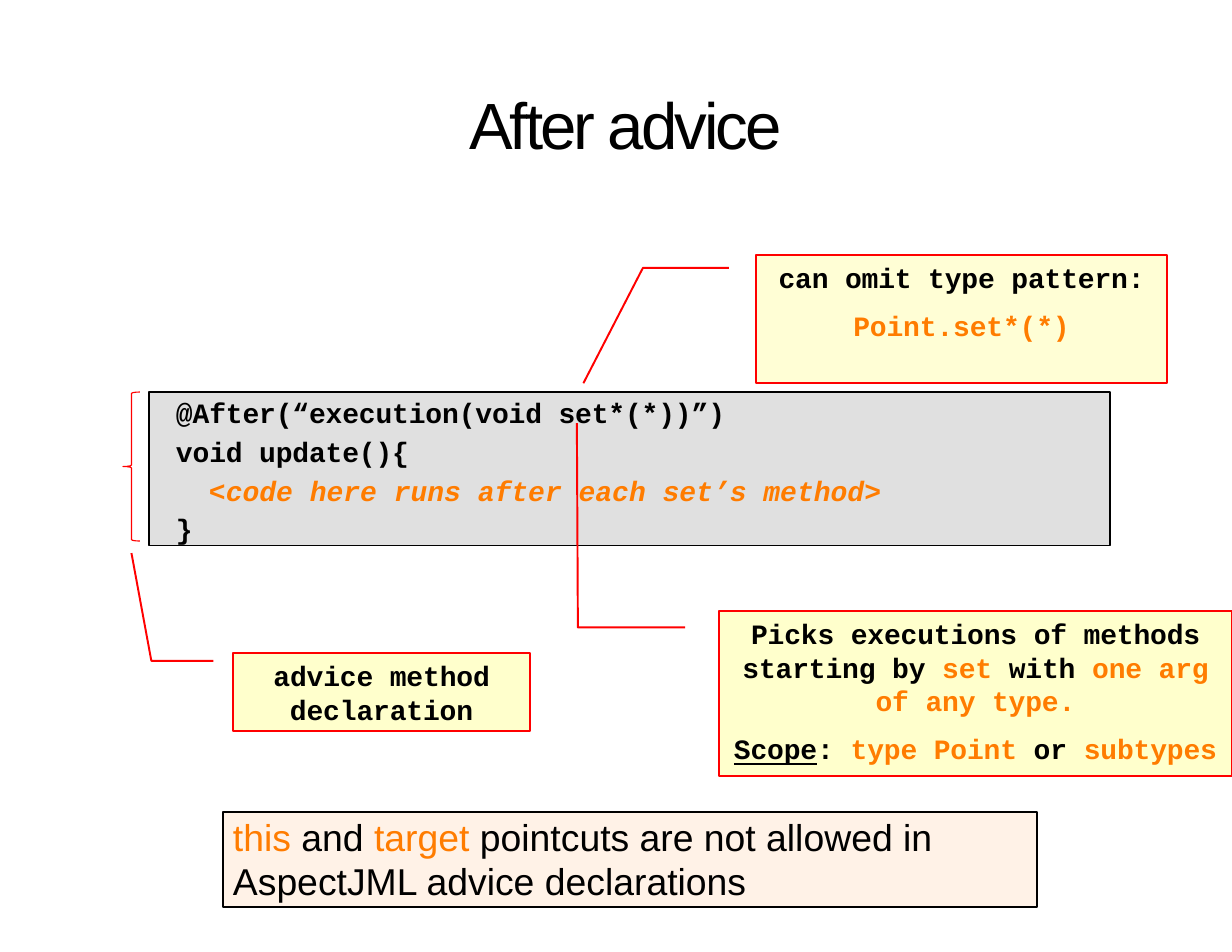
"""Build a slide on after advice, with annotated code and a closing note."""
from pptx import Presentation
from pptx.dml.color import RGBColor
from pptx.enum.shapes import MSO_SHAPE
from pptx.enum.text import MSO_ANCHOR, PP_ALIGN
from pptx.util import Pt

RECT = MSO_SHAPE.RECTANGLE
CALLOUT = MSO_SHAPE.LINE_CALLOUT_2
BRACE = MSO_SHAPE.LEFT_BRACE
TOP = MSO_ANCHOR.TOP
LEFT, CENTER = PP_ALIGN.LEFT, PP_ALIGN.CENTER

PX = 914400 // 112
BLACK = RGBColor(0x00, 0x00, 0x00)
ORANGE = RGBColor(0xFF, 0x7C, 0x00)
RED = RGBColor(0xFF, 0x00, 0x00)
GRAY = RGBColor(0xE0, 0xE0, 0xE0)
CREAM = RGBColor(0xFF, 0xFE, 0xD5)
YELLOW = RGBColor(0xFF, 0xFF, 0xCC)
PEACH = RGBColor(0xFF, 0xF2, 0xE7)
MONO, SANS = "Courier New", "Arial"

deck = Presentation()
deck.slide_width, deck.slide_height = 1232 * PX, 952 * PX
slide = deck.slides.add_slide(deck.slide_layouts[6])


def add_box(kind, place, fill, line, weight):
    box = slide.shapes.add_shape(kind, *[n * PX for n in place])
    box.shadow.inherit = False
    if fill is None:
        box.fill.background()
    else:
        box.fill.solid()
        box.fill.fore_color.rgb = fill
    box.line.color.rgb = line
    box.line.width = Pt(weight)
    return box


def write(frame, paras, font, size, align, gap=0, space=0, bold=False):
    frame.word_wrap = True
    frame.vertical_anchor = TOP
    for i, parts in enumerate(paras):
        para = frame.paragraphs[0] if i == 0 else frame.add_paragraph()
        para.alignment = align
        para.space_before = Pt(gap if i else 0)
        for text, color in parts:
            run = para.add_run()
            run.text = text
            run.font.name, run.font.size = font, Pt(size)
            run.font.bold = bold
            run.font.color.rgb = color
            if space:
                run.font._element.set("spc", str(space))


title = slide.shapes.add_textbox(131 * PX, 84 * PX, 989 * PX, 79 * PX).text_frame
title.margin_left = title.margin_right = title.margin_top = title.margin_bottom = 0
write(title, [[("After advice", BLACK)]], SANS, 42, CENTER, space=-190)

code = add_box(RECT, (149, 392, 961, 154), GRAY, BLACK, 0.75).text_frame
code.margin_left, code.margin_top = 27 * PX, 4 * PX
code.margin_right = code.margin_bottom = 0
lines = [
    [("@After(“execution(void set*(*))”)", BLACK)],
    [("void update(){", BLACK)],
    [("<code here runs after each set’s method>", ORANGE)],
    [("}", BLACK)],
]
write(code, lines, MONO, 18, LEFT, 3.2, -10, True)
body = code.paragraphs[2]
body.runs[0].font.italic = True
body.runs[0].font._element.set("spc", "0")
body._p.get_or_add_pPr().set("marL", str(33 * PX))

notes = [
    ((756, 255, 411, 128), CREAM, (1.002, -0.42), [
        [("can omit type pattern:", BLACK)],
        [("Point.set*(*)", ORANGE)],
    ]),
    ((233, 653, 297, 78), YELLOW, (-1.282, -0.342), [
        [("advice method declaration", BLACK)],
    ]),
    ((719, 611, 513, 165), YELLOW, (-1.138, -0.277), [
        [("Picks executions of methods starting by ", BLACK), ("set ", ORANGE),
         ("with ", BLACK), ("one arg of any type.", ORANGE)],
        [("Scope", BLACK), (":", BLACK), (" type Point ", ORANGE),
         ("or", BLACK), (" subtypes", ORANGE)],
    ]),
]
for place, fill, tip, paras in notes:
    note = add_box(CALLOUT, place, fill, RED, 1.25)
    for i, value in enumerate((0.1, -0.066, 0.1, -0.275, *tip)):
        note.adjustments[i] = value
    write(note.text_frame, paras, MONO, 18, CENTER, 9, -10, True)
note.text_frame.paragraphs[1].runs[0].font.underline = True

brace = add_box(BRACE, (123, 392, 17, 149), None, RED, 0.75)
brace.adjustments[0] = 0.083

rule = add_box(RECT, (223, 812, 814, 95), PEACH, BLACK, 1).text_frame
rule.margin_left, rule.margin_top = 10 * PX, 4 * PX
rule.margin_right = rule.margin_bottom = 0
words = [
    ("this", ORANGE), (" and ", BLACK), ("target ", ORANGE),
    ("pointcuts are not allowed in AspectJML advice declarations", BLACK),
]
write(rule, [words], SANS, 24, LEFT)
rule.paragraphs[0].line_spacing = 0.99

deck.save("out.pptx")
